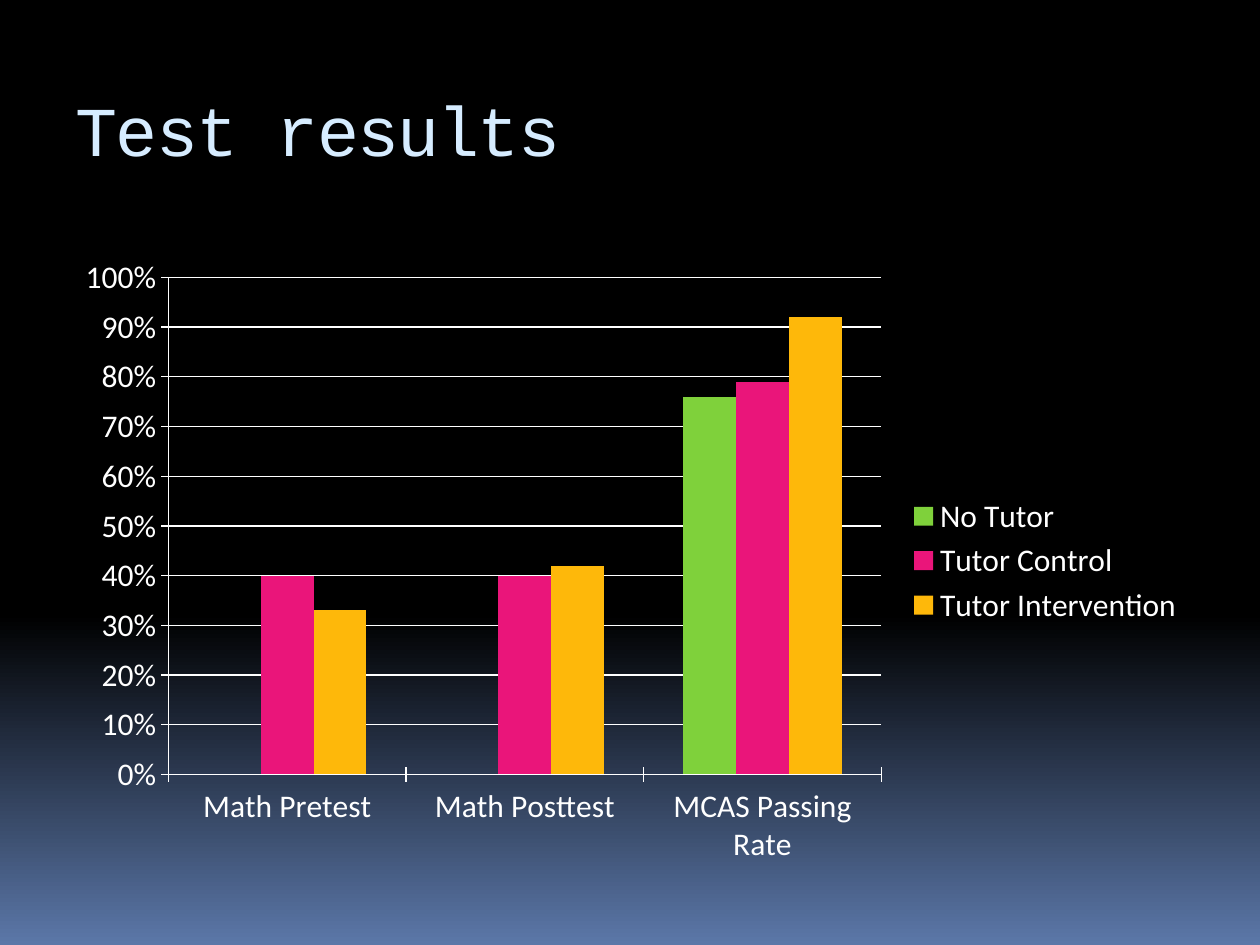
from copy import deepcopy

from pptx import Presentation
from pptx.chart.data import CategoryChartData
from pptx.dml.color import RGBColor
from pptx.enum.chart import XL_CHART_TYPE, XL_LEGEND_POSITION, XL_TICK_MARK
from pptx.enum.text import MSO_ANCHOR, PP_ALIGN
from pptx.oxml.ns import qn
from pptx.util import Inches, Pt

COLUMNS = XL_CHART_TYPE.COLUMN_CLUSTERED
LEGEND_RIGHT = XL_LEGEND_POSITION.RIGHT
TICK_CROSS = XL_TICK_MARK.CROSS
TICK_NONE = XL_TICK_MARK.NONE
MIDDLE = MSO_ANCHOR.MIDDLE
LEFT = PP_ALIGN.LEFT

BLACK = RGBColor(0x00, 0x00, 0x00)
WHITE = RGBColor(0xFF, 0xFF, 0xFF)
DUSK_BLUE = RGBColor(0x5B, 0x77, 0xA8)
PALE_BLUE = RGBColor(0xD6, 0xEC, 0xFF)
GREEN = RGBColor(0x7F, 0xD1, 0x3B)
PINK = RGBColor(0xEA, 0x15, 0x7A)
AMBER = RGBColor(0xFE, 0xB8, 0x0A)

TITLE_ONLY = 5
TESTS = ["Math Pretest", "Math Posttest", "MCAS Passing Rate"]
GROUPS = [
    ("No Tutor", [None, None, 0.76], GREEN),
    ("Tutor Control", [0.4, 0.4, 0.79], PINK),
    ("Tutor Intervention", [0.33, 0.42, 0.92], AMBER),
]


def write_text(frame, text, *, font, size, color, spacing=0, align=LEFT):
    """Fill a text frame with one run; spacing is the tracking in points."""
    paragraph = frame.paragraphs[0]
    paragraph.alignment = align
    run = paragraph.add_run()
    run.text = text
    run.font.name = font
    run.font.size = Pt(size)
    run.font.color.rgb = color
    run.font._element.set("spc", str(spacing * 100))


class SlideBuilder:
    title_font = "Courier New"
    body_font = "Calibri"

    def __init__(self, slide):
        self.slide = slide

    def background(self, stops):
        """Apply a top-to-bottom gradient of (position, colour) stops."""
        fill = self.slide.background.fill
        fill.gradient()
        fill.gradient_angle = 270
        stop_list = self.slide.element.find(".//" + qn("a:gsLst"))
        while len(stop_list) < len(stops):
            stop_list.append(deepcopy(stop_list[-1]))
        for stop, (position, color) in zip(fill.gradient_stops, stops):
            stop.position = position
            stop.color.rgb = color

    def title(self, text, left, top, width, height):
        title = self.slide.shapes.title
        title.left, title.top = Inches(left), Inches(top)
        title.width, title.height = Inches(width), Inches(height)
        frame = title.text_frame
        frame.word_wrap = True
        frame.vertical_anchor = MIDDLE
        frame.margin_bottom = Inches(0.13)
        write_text(frame, text, font=self.title_font, size=40,
                   color=PALE_BLUE, spacing=-1)

    def column_chart(self, categories, groups, left, top, width, height):
        data = CategoryChartData(number_format="0%")
        data.categories = categories
        for name, values, _ in groups:
            data.add_series(name, values)
        chart = self.slide.shapes.add_chart(
            COLUMNS, Inches(left), Inches(top), Inches(width), Inches(height), data
        ).chart
        chart.has_title = False
        chart.font.name = self.body_font
        chart.font.size = Pt(18)
        chart.font.color.rgb = WHITE
        chart.has_legend = True
        chart.legend.position = LEGEND_RIGHT
        chart.legend.include_in_layout = False

        plot = chart.plots[0]
        plot.gap_width = 150
        plot.overlap = 0
        plot.vary_by_categories = False
        for series, (_, _, color) in zip(plot.series, groups):
            series.format.fill.solid()
            series.format.fill.fore_color.rgb = color
            series.invert_if_negative = False

        rates = chart.value_axis
        rates.minimum_scale, rates.maximum_scale, rates.major_unit = 0, 1, 0.1
        rates.has_major_gridlines = True
        rates.tick_labels.number_format = "0%"
        rates.tick_labels.number_format_is_linked = False
        for axis in (chart.category_axis, rates):
            axis.major_tick_mark = TICK_CROSS
            axis.minor_tick_mark = TICK_NONE
        for lined in (chart.category_axis, rates, rates.major_gridlines):
            lined.format.line.color.rgb = WHITE
            lined.format.line.width = Pt(0.75)


def main():
    deck = Presentation()
    deck.slide_width, deck.slide_height = Inches(10), Inches(7.5)
    builder = SlideBuilder(deck.slides.add_slide(deck.slide_layouts[TITLE_ONLY]))
    builder.background([(0, BLACK), (0.65, BLACK), (1, DUSK_BLUE)])
    builder.title("Test results", 0.5, 0.56, 9, 1)
    builder.column_chart(TESTS, GROUPS, 0.5, 1.95, 9, 5)
    deck.save("out.pptx")


if __name__ == "__main__":
    main()
